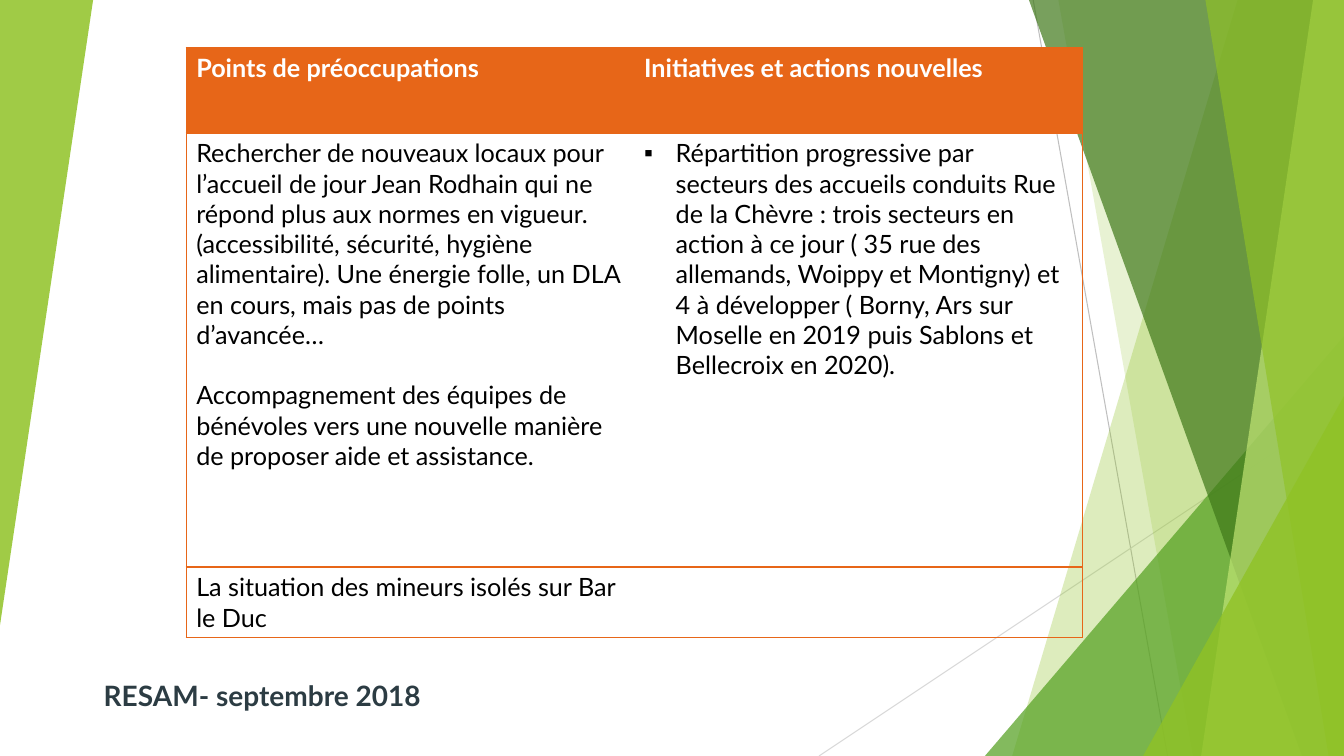
"""Build a slide with a table of concerns and initiatives over green facets."""
from lxml import etree
from pptx import Presentation
from pptx.dml.color import RGBColor
from pptx.enum.shapes import MSO_CONNECTOR, MSO_SHAPE
from pptx.enum.text import MSO_ANCHOR
from pptx.oxml.ns import qn
from pptx.util import Pt

STRAIGHT = MSO_CONNECTOR.STRAIGHT
TRIANGLE = MSO_SHAPE.ISOSCELES_TRIANGLE
BOTTOM = MSO_ANCHOR.BOTTOM
WIDTH, HEIGHT = 960, 540
FONT = "Lato"
GREEN, ORANGE, WHITE, BLACK, SLATE = "90C226", "E76618", "FFFFFF", "000000", "2C3C43"

BANDS = [
    (884, 723, GREEN, 30),
    (756, 852, GREEN, 20),
    (735, 930, "3F7819", 70),
    (938, 858, "C0E474", 70),
    (861, 949, GREEN, 65),
]
HEADINGS = ["Points de préoccupations", "Initiatives et actions nouvelles"]
CONCERNS = [
    "Rechercher de nouveaux locaux pour l’accueil de jour Jean Rodhain qui ne répond plus "
    "aux normes en vigueur. (accessibilité, sécurité, hygiène alimentaire). Une énergie folle, "
    "un DLA en cours, mais pas de points d’avancée…",
    "Accompagnement des équipes de bénévoles vers une nouvelle manière de proposer aide "
    "et assistance.",
]
INITIATIVE = (
    "Répartition progressive par secteurs des accueils conduits Rue de la Chèvre : trois "
    "secteurs en action à ce jour ( 35 rue des allemands, Woippy et Montigny) et 4 à développer "
    "( Borny, Ars sur Moselle en 2019 puis Sablons et Bellecroix en 2020)."
)
MINORS = "La situation des mineurs isolés sur Bar le Duc"


def colour(value):
    return RGBColor.from_string(value)


class Painter:
    def __init__(self, page):
        self.page = page

    def line(self, start, end, tint):
        connector = self.page.shapes.add_connector(STRAIGHT, *map(Pt, start + end))
        connector.line.color.rgb = colour(tint)
        connector.line.width = Pt(0.75)
        etree.SubElement(connector._element.spPr, qn("a:effectLst"))

    def paint(self, shape, tint, opacity):
        shape.shadow.inherit = False
        shape.line.fill.background()
        shape.fill.solid()
        shape.fill.fore_color.rgb = colour(tint)
        solid = shape._element.spPr.find(qn("a:solidFill"))
        etree.SubElement(solid[0], qn("a:alpha"), val=str(opacity * 1000))

    def band(self, top, bottom, tint, opacity):
        builder = self.page.shapes.build_freeform(Pt(top), 0)
        corners = [(WIDTH, 0), (WIDTH, HEIGHT), (bottom, HEIGHT)]
        builder.add_line_segments([(Pt(x), Pt(y)) for x, y in corners], close=True)
        self.paint(builder.convert_to_shape(), tint, opacity)

    def triangle(self, frame, tint, opacity, rotation=0):
        shape = self.page.shapes.add_shape(TRIANGLE, *map(Pt, frame))
        shape.adjustments[0] = 1
        shape.rotation = rotation
        self.paint(shape, tint, opacity)

    def span(self, para, text, size, tint, bold):
        run = para.add_run()
        run.text = text
        run.font.name = FONT
        run.font.size = Pt(size)
        run.font.bold = bold
        run.font.color.rgb = colour(tint)

    def text(self, frame, text):
        box = self.page.shapes.add_textbox(*map(Pt, frame)).text_frame
        box.word_wrap = True
        box.vertical_anchor = BOTTOM
        self.span(box.paragraphs[0], text, 20, SLATE, True)

    def bullet(self, para):
        properties = para._p.get_or_add_pPr()
        properties.set("marL", str(Pt(22.5)))
        properties.set("indent", str(-Pt(22.5)))
        etree.SubElement(properties, qn("a:buFont"), typeface="Arial")
        etree.SubElement(properties, qn("a:buChar"), char="▪")

    def borders(self, cell, shown):
        properties = cell._tc.get_or_add_tcPr()
        for position, side in enumerate("LRTB"):
            edge = etree.Element(qn(f"a:ln{side}"), w=str(Pt(1)))
            if side in shown:
                solid = etree.SubElement(edge, qn("a:solidFill"))
                etree.SubElement(solid, qn("a:srgbClr"), val=ORANGE)
            else:
                etree.SubElement(edge, qn("a:noFill"))
            properties.insert(position, edge)

    def cell(self, cell, texts, header, shown):
        if header:
            cell.fill.solid()
            cell.fill.fore_color.rgb = colour(ORANGE)
        else:
            cell.fill.background()
        self.borders(cell, shown)
        for index, text in enumerate(texts):
            box = cell.text_frame
            para = box.add_paragraph() if index else box.paragraphs[0]
            para.space_before = Pt(21.6 if index else 0)
            self.span(para, text, 18, WHITE if header else BLACK, header)

    def table(self, left, top, width, heights, rows):
        frame = self.page.shapes.add_table(
            len(rows), len(rows[0]), Pt(left), Pt(top), Pt(width), Pt(sum(heights)))
        table = frame.table
        table.horz_banding = False
        for row, (height, contents) in enumerate(zip(heights, rows)):
            table.rows[row].height = Pt(height)
            for column, texts in enumerate(contents):
                self.cell(table.cell(row, column), texts, row == 0, "LR"[column] + "TB")
        return table


def main():
    deck = Presentation()
    deck.slide_width, deck.slide_height = Pt(WIDTH), Pt(HEIGHT)
    painter = Painter(deck.slides.add_slide(deck.slide_layouts[6]))
    painter.line((738, 0), (834, HEIGHT), "BFBFBF")
    painter.line((WIDTH, 290), (585, HEIGHT), "D9D9D9")
    for band in BANDS[:2]:
        painter.band(*band)
    painter.triangle((703.5, 240, 256.5, 300), "54A021", 72)
    for band in BANDS[2:]:
        painter.band(*band)
    painter.triangle((816.5, 283, 143.5, 257), GREEN, 80)
    painter.triangle((0, 0, 66.5, 446.5), GREEN, 85, 180)
    painter.text((67, 42, 687, 470), "RESAM- septembre 2018")
    rows = [[[heading] for heading in HEADINGS], [CONCERNS, [INITIATIVE]], [[MINORS], []]]
    table = painter.table(133, 34, 640, (61, 310, 50), rows)
    painter.bullet(table.cell(1, 1).text_frame.paragraphs[0])
    deck.save("out.pptx")


if __name__ == "__main__":
    main()
